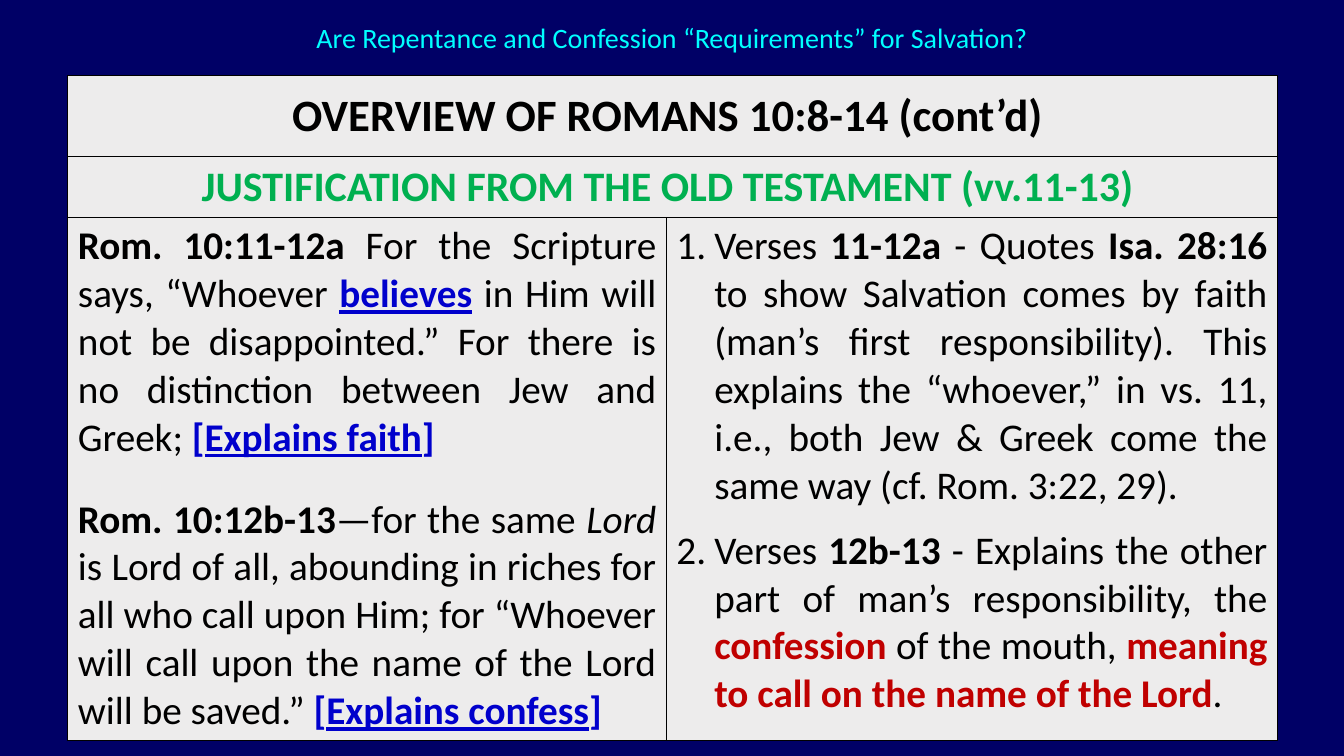
"""Builds a slide with a two-column table on Romans 10:8-14."""
from lxml.etree import SubElement
from pptx import Presentation
from pptx.dml.color import RGBColor
from pptx.enum.text import MSO_ANCHOR, MSO_AUTO_SIZE, PP_ALIGN
from pptx.oxml.ns import qn
from pptx.util import Pt

FONT = "Calibri"
COLORS = {
    "background": "000066",
    "title": "00FFFF",
    "cell": "EDECEC",
    "text": "000000",
    "heading": "00B050",
    "note": "0000CC",
    "stress": "C00000",
}
STYLES = {
    "plain": {},
    "bold": {"bold": True},
    "italic": {"italic": True},
    "note": {"bold": True, "color": "note"},
    "note_line": {"bold": True, "color": "note", "underline": True},
    "stress": {"bold": True, "color": "stress"},
}
COLUMNS = [427.5, 436.5]
ROWS = [57.6, 43.8, 373.6]

PASSAGES = [
    [
        ("Rom. 10:11-12a ", "bold"),
        ("For the Scripture says, “Whoever ", "plain"),
        ("believes", "note_line"),
        (" in Him will not be disappointed.” For there is no distinction "
         "between Jew and Greek; ", "plain"),
        ("[", "note"),
        ("Explains faith", "note_line"),
        ("]", "note"),
    ],
    [
        ("Rom. 10:12b-13", "bold"),
        ("—for the same ", "plain"),
        ("Lord", "italic"),
        (" is Lord of all, abounding in riches for all who call upon Him; "
         "for “Whoever will call upon the name of the Lord will be saved.” ",
         "plain"),
        ("[", "note"),
        ("Explains confess", "note_line"),
        ("]", "note"),
    ],
]
COMMENTS = [
    [
        ("Verses ", "plain"),
        ("11-12a", "bold"),
        (" - Quotes ", "plain"),
        ("Isa. 28:16 ", "bold"),
        ("to show Salvation comes by faith (man’s first responsibility). "
         "This explains the “whoever,” in vs. 11, i.e., both Jew & Greek "
         "come the same way (cf. Rom. 3:22, 29).", "plain"),
    ],
    [
        ("Verses ", "plain"),
        ("12b-13", "bold"),
        (" - Explains the other part of man’s responsibility, the ", "plain"),
        ("confession", "stress"),
        (" of the mouth, ", "plain"),
        ("meaning to call on the name of the Lord", "stress"),
        (".", "plain"),
    ],
]


def rgb(name):
    return RGBColor.from_string(COLORS[name])


def set_font(font, size, color, bold=False):
    font.name = FONT
    font.size = Pt(size)
    font.bold = bold
    font.color.rgb = rgb(color)


def add_title(s, text):
    sp = s.shapes.title
    sp.left, sp.top, sp.width, sp.height = Pt(162), Pt(12), Pt(636), Pt(30)
    tf = sp.text_frame
    tf.text = text
    tf.auto_size = MSO_AUTO_SIZE.NONE
    tf.vertical_anchor = MSO_ANCHOR.MIDDLE
    p = tf.paragraphs[0]
    p.alignment = PP_ALIGN.CENTER
    set_font(p.font, 20, "title")


def add_grid(s):
    frame = s.shapes.add_table(len(ROWS), len(COLUMNS), Pt(48.5), Pt(54),
                               Pt(sum(COLUMNS)), Pt(sum(ROWS)))
    table = frame.table
    table.first_row = table.horz_banding = False
    for column, width in zip(table.columns, COLUMNS):
        column.width = Pt(width)
    for row, height in zip(table.rows, ROWS):
        row.height = Pt(height)
    for cell in table.iter_cells():
        format_cell(cell)
    return table


def format_cell(cell):
    tc_pr = cell._tc.get_or_add_tcPr()
    for side in ("lnL", "lnR", "lnT", "lnB"):
        line = SubElement(tc_pr, qn(f"a:{side}"), w=str(Pt(1)))
        fill = SubElement(line, qn("a:solidFill"))
        SubElement(fill, qn("a:srgbClr"), val=COLORS["text"])
    cell.fill.solid()
    cell.fill.fore_color.rgb = rgb("cell")


def add_heading(table, row, text, size, color):
    cell = table.cell(row, 0)
    cell.merge(table.cell(row, 1))
    cell.vertical_anchor = MSO_ANCHOR.MIDDLE
    cell.text = text
    p = cell.text_frame.paragraphs[0]
    p.alignment = PP_ALIGN.CENTER
    set_font(p.font, size, color, bold=True)


def number_paragraph(p):
    p_pr = p._p.get_or_add_pPr()
    p_pr.set("marL", str(Pt(27)))
    p_pr.set("indent", str(Pt(-27)))
    color = SubElement(p_pr, qn("a:buClr"))
    SubElement(color, qn("a:srgbClr"), val=COLORS["text"])
    SubElement(p_pr, qn("a:buAutoNum"), type="arabicPeriod")


def add_run(p, text, bold=False, italic=False, underline=False, color="text"):
    r = p.add_run()
    r.text = text
    r.font.bold, r.font.italic = bold, italic
    r.font.underline = underline
    r.font.color.rgb = rgb(color)


def fill_body(cell, paragraphs, gap, numbered=False):
    tf = cell.text_frame
    for i, runs in enumerate(paragraphs):
        p = tf.add_paragraph() if i else tf.paragraphs[0]
        p.alignment = PP_ALIGN.JUSTIFY
        p.space_after = Pt(gap if i < len(paragraphs) - 1 else 0)
        if numbered:
            number_paragraph(p)
        p.font.name = FONT
        p.font.size = Pt(28)
        for text, style in runs:
            add_run(p, text, **STYLES[style])


def main():
    prs = Presentation()
    prs.slide_width, prs.slide_height = Pt(960), Pt(540)
    s = prs.slides.add_slide(prs.slide_layouts[5])
    s.background.fill.solid()
    s.background.fill.fore_color.rgb = rgb("background")
    add_title(s, "Are Repentance and Confession “Requirements” for Salvation?")
    table = add_grid(s)
    add_heading(table, 0, "OVERVIEW OF ROMANS 10:8-14 (cont’d) ", 32, "text")
    add_heading(table, 1, "JUSTIFICATION FROM THE OLD TESTAMENT (vv.11-13) ",
                30, "heading")
    fill_body(table.cell(2, 0), PASSAGES, gap=24)
    fill_body(table.cell(2, 1), COMMENTS, gap=12, numbered=True)
    prs.save("out.pptx")


if __name__ == "__main__":
    main()
